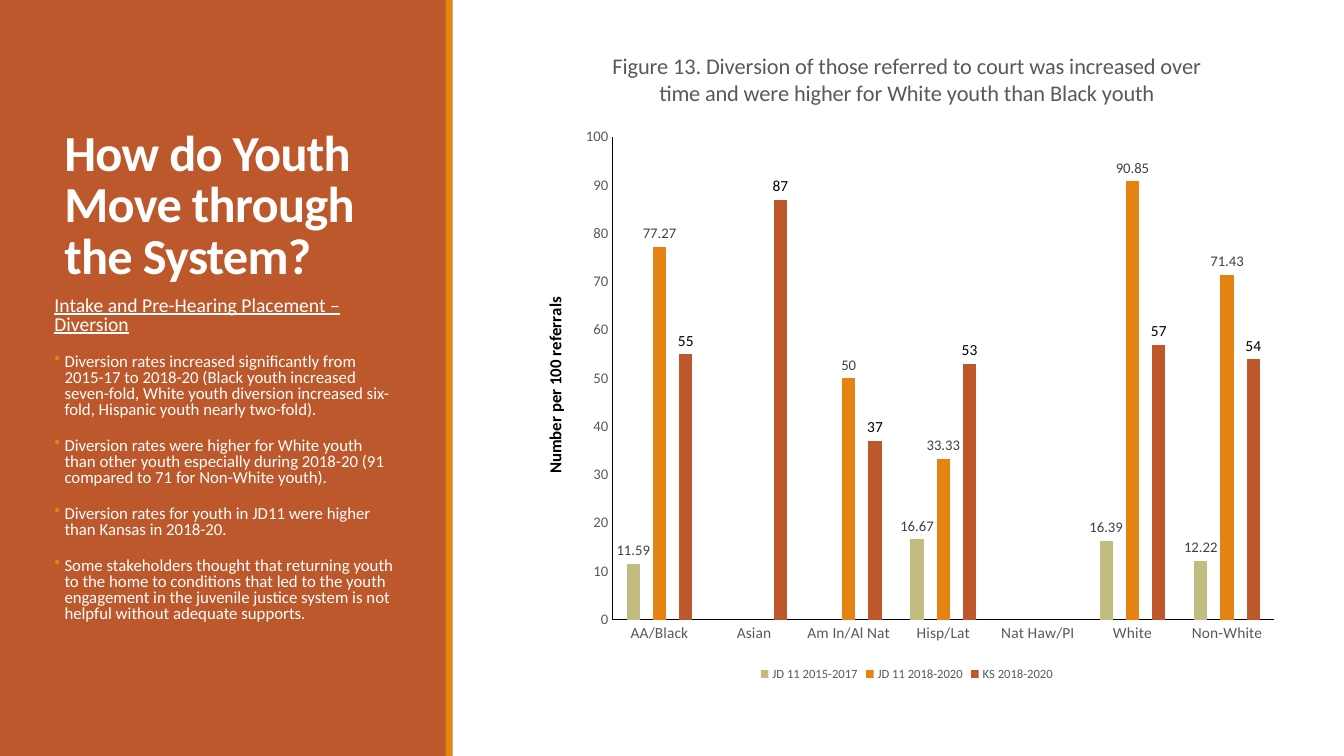
"""Build the slide on diversion rates of youth referred to court."""
from dataclasses import dataclass
from typing import Optional

from lxml import etree
from pptx import Presentation
from pptx.chart.data import CategoryChartData
from pptx.dml.color import RGBColor
from pptx.enum.chart import XL_CHART_TYPE, XL_LABEL_POSITION, XL_LEGEND_POSITION, XL_TICK_MARK
from pptx.enum.shapes import MSO_SHAPE
from pptx.enum.text import MSO_ANCHOR
from pptx.oxml.ns import qn
from pptx.util import Inches, Pt

COLUMNS = XL_CHART_TYPE.COLUMN_CLUSTERED
OUTSIDE_END = XL_LABEL_POSITION.OUTSIDE_END
LEGEND_BOTTOM = XL_LEGEND_POSITION.BOTTOM
NO_TICK = XL_TICK_MARK.NONE
RECTANGLE = MSO_SHAPE.RECTANGLE
BOTTOM = MSO_ANCHOR.BOTTOM
FONT = "Calibri"
RUST, ORANGE, OLIVE = "BD582C", "E48312", "C2BC80"
WHITE, BLACK, GREY, DARK = "FFFFFF", "000000", "595959", "404040"


@dataclass
class Band:
    left: float
    width: float
    fill: str


@dataclass
class Series:
    name: str
    values: tuple[Optional[float], ...]
    fill: str
    label_size: float
    label_color: str
    number_format: str


BANDS = [Band(0, 4.43, RUST), Band(4.42, 0.07, ORANGE)]
HEADING = "How do Youth Move through the System?"
SUBHEADING = "Intake and Pre-Hearing Placement – Diversion"
FINDINGS = [
    "Diversion rates increased significantly from 2015-17 to 2018-20 (Black youth increased "
    "seven-fold, White youth diversion increased six-fold, Hispanic youth nearly two-fold).",
    "Diversion rates were higher for White youth than other youth especially during 2018-20 "
    "(91 compared to 71 for Non-White youth).",
    "Diversion rates for youth in JD11 were higher than Kansas in 2018-20.",
    "Some stakeholders thought that returning youth to the home to conditions that led to the "
    "youth engagement in the juvenile justice system is not helpful without adequate supports.",
]
FIGURE_TITLE = ("Figure 13. Diversion of those referred to court was increased over time "
                "and were higher for White youth than Black youth")
GROUPS = ["AA/Black", "Asian", "Am In/Al Nat", "Hisp/Lat", "Nat Haw/PI", "White", "Non-White"]
RATES = [
    Series("JD 11 2015-2017", (11.59, None, None, 16.67, None, 16.39, 12.22),
           OLIVE, 10.5, DARK, "General"),
    Series("JD 11 2018-2020", (77.27, None, 50, 33.33, None, 90.85, 71.43),
           ORANGE, 10.5, DARK, "General"),
    Series("KS 2018-2020", (55, 87, 37, 53, None, 57, 54), RUST, 11, BLACK, "0"),
]
PLOT_LAYOUT = {"x": 0.116, "y": 0.166, "w": 0.863, "h": 0.734}


def rgb(value: str) -> RGBColor:
    return RGBColor.from_string(value)


def set_font(font, size: float, color: str, bold: bool = False) -> None:
    font.name = FONT
    font.size = Pt(size)
    font.bold = bold
    font.color.rgb = rgb(color)


def add_run(paragraph, text: str, size: float, color: str, bold: bool = False):
    run = paragraph.add_run()
    run.text = text
    set_font(run.font, size, color, bold)
    return run


def add_band(slide, band: Band) -> None:
    bar = slide.shapes.add_shape(RECTANGLE, Inches(band.left), 0, Inches(band.width), Inches(7.5))
    bar.shadow.inherit = False
    bar.fill.solid()
    bar.fill.fore_color.rgb = rgb(band.fill)
    bar.line.fill.background()


def add_text_frame(slide, top: float, height: float):
    box = slide.shapes.add_textbox(Inches(0.54), Inches(top), Inches(3.37), Inches(height))
    box.text_frame.word_wrap = True
    return box.text_frame


def add_bullet(paragraph) -> None:
    properties = paragraph._p.get_or_add_pPr()
    properties.set("marL", str(Inches(0.1)))
    properties.set("indent", str(-Inches(0.1)))
    bullet_color = etree.SubElement(properties, qn("a:buClr"))
    etree.SubElement(bullet_color, qn("a:srgbClr")).set("val", ORANGE)
    etree.SubElement(properties, qn("a:buChar")).set("char", "•")


def add_heading(slide) -> None:
    frame = add_text_frame(slide, 0.57, 2.3)
    frame.vertical_anchor = BOTTOM
    paragraph = frame.paragraphs[0]
    paragraph.line_spacing = 0.85
    run = add_run(paragraph, HEADING, 36, WHITE, True)
    run._r.get_or_add_rPr().set("spc", "-50")


def add_findings(slide) -> None:
    frame = add_text_frame(slide, 2.9, 3.65)
    frame.margin_left = frame.margin_right = 0
    subheading = frame.paragraphs[0]
    add_run(subheading, SUBHEADING, 14, WHITE).font.underline = True
    for finding in FINDINGS:
        add_run(frame.add_paragraph(), finding, 12, WHITE)
    for paragraph in frame.paragraphs:
        paragraph.line_spacing = 0.8
        paragraph.space_before = Pt(12)
        paragraph.space_after = Pt(2)
    for paragraph in frame.paragraphs[1:]:
        add_bullet(paragraph)


def style_axis(axis, size: float) -> None:
    axis.has_major_gridlines = False
    axis.major_tick_mark = axis.minor_tick_mark = NO_TICK
    set_font(axis.tick_labels.font, size, GREY)
    axis.format.line.color.rgb = rgb(BLACK)
    axis.format.line.width = Pt(0.75)


def style_series(series, rates: Series) -> None:
    series.format.fill.solid()
    series.format.fill.fore_color.rgb = rgb(rates.fill)
    series.invert_if_negative = False
    labels = series.data_labels
    labels.show_value = True
    labels.position = OUTSIDE_END
    labels.number_format = rates.number_format
    labels.number_format_is_linked = False
    set_font(labels.font, rates.label_size, rates.label_color)


def place_plot(chart) -> None:
    plot_area = chart.element.find(".//" + qn("c:plotArea"))
    for old_layout in plot_area.findall(qn("c:layout")):
        plot_area.remove(old_layout)
    layout = etree.Element(qn("c:layout"))
    manual = etree.SubElement(layout, qn("c:manualLayout"))
    settings = {"layoutTarget": "inner", "xMode": "edge", "yMode": "edge", **PLOT_LAYOUT}
    for tag, value in settings.items():
        etree.SubElement(manual, qn("c:" + tag)).set("val", str(value))
    plot_area.insert(0, layout)


def add_rates_chart(slide) -> None:
    data = CategoryChartData()
    data.categories = GROUPS
    for rates in RATES:
        data.add_series(rates.name, rates.values)
    chart = slide.shapes.add_chart(
        COLUMNS, Inches(5.19), Inches(0.28), Inches(7.61), Inches(6.52), data).chart
    set_font(chart.font, 10, BLACK)
    chart.has_title = True
    add_run(chart.chart_title.text_frame.paragraphs[0], FIGURE_TITLE, 16, GREY)
    chart.chart_title.include_in_layout = False
    chart.has_legend = True
    chart.legend.position = LEGEND_BOTTOM
    chart.legend.include_in_layout = False
    set_font(chart.legend.font, 9, GREY)
    style_axis(chart.category_axis, 11)
    rate_axis = chart.value_axis
    style_axis(rate_axis, 10.5)
    rate_axis.minimum_scale, rate_axis.maximum_scale, rate_axis.major_unit = 0, 100, 10
    axis_title = rate_axis.axis_title
    add_run(axis_title.text_frame.paragraphs[0], "Number per 100 referrals", 12, BLACK, True)
    axis_title._element.find(".//" + qn("a:bodyPr")).set("rot", "-5400000")
    plot = chart.plots[0]
    plot.gap_width, plot.overlap, plot.vary_by_categories = 219, -100, False
    for series, rates in zip(plot.series, RATES):
        style_series(series, rates)
    place_plot(chart)


def main() -> None:
    deck = Presentation()
    deck.slide_width, deck.slide_height = Inches(13.33), Inches(7.5)
    slide = deck.slides.add_slide(deck.slide_layouts[6])
    for band in BANDS:
        add_band(slide, band)
    add_heading(slide)
    add_findings(slide)
    add_rates_chart(slide)
    deck.save("out.pptx")


if __name__ == "__main__":
    main()
